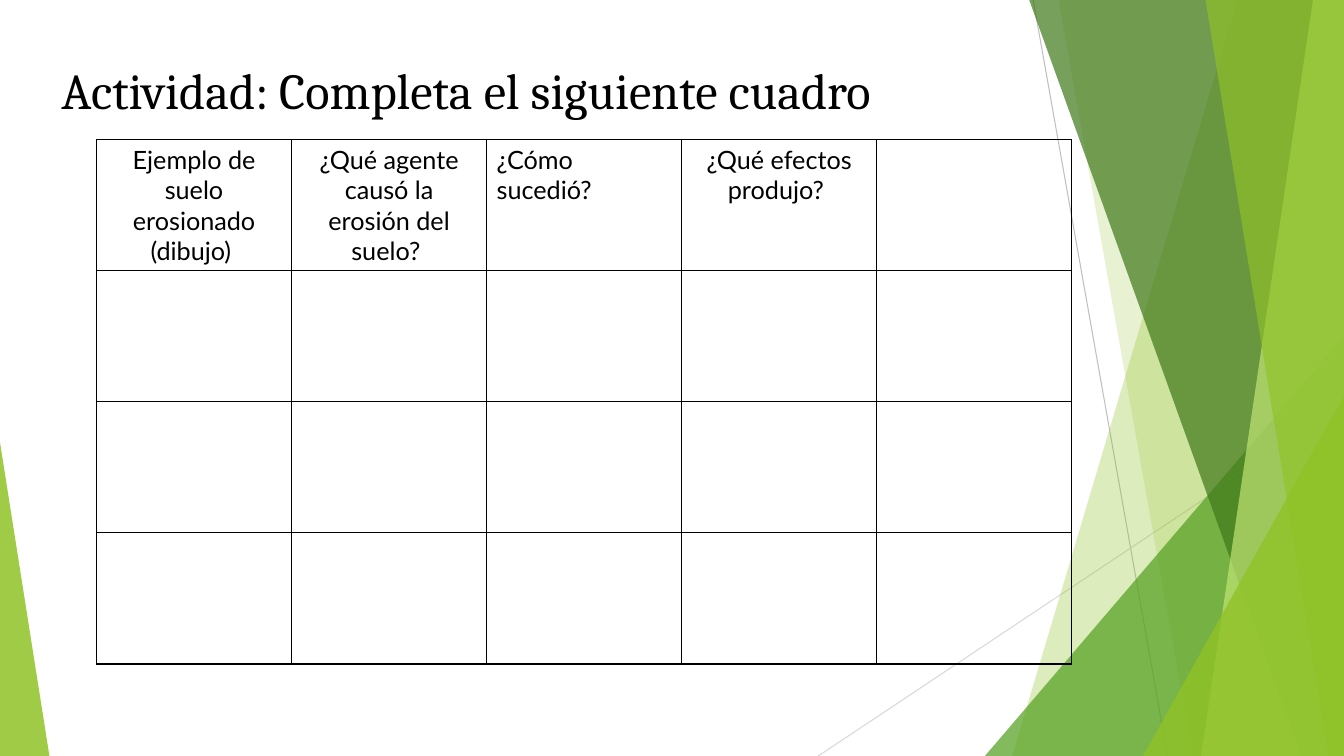
from lxml import etree
from pptx import Presentation
from pptx.dml.color import RGBColor
from pptx.enum.shapes import MSO_CONNECTOR, MSO_SHAPE
from pptx.enum.text import MSO_ANCHOR, PP_ALIGN
from pptx.oxml.ns import qn
from pptx.util import Pt

STRAIGHT = MSO_CONNECTOR.STRAIGHT
TRIANGLE = MSO_SHAPE.ISOSCELES_TRIANGLE
TOP = MSO_ANCHOR.TOP
LEFT, CENTER = PP_ALIGN.LEFT, PP_ALIGN.CENTER

WIDTH, HEIGHT = 960, 540
BLACK, LIME, GREEN = "000000", "90C226", "54A021"
TITLE_FONT = {"name": "Cambria", "size": Pt(36), "bold": False}
CELL_FONT = {"name": "Lato", "size": Pt(18), "bold": False}


def color(value):
    return RGBColor.from_string(value)


class SlideBuilder:
    """Holds the style and the current slide, and adds each kind of element."""

    def __init__(self, presentation):
        self.slide = presentation.slides.add_slide(presentation.slide_layouts[6])
        self.shapes = self.slide.shapes

    def line(self, start, end, line_color):
        connector = self.shapes.add_connector(STRAIGHT, *map(Pt, start + end))
        connector.line.color.rgb = color(line_color)
        connector.line.width = Pt(0.75)
        etree.SubElement(connector._element.spPr, qn("a:effectLst"))

    def paint(self, shape, fill_color, opacity):
        shape.shadow.inherit = False
        shape.fill.solid()
        shape.fill.fore_color.rgb = color(fill_color)
        shape.line.fill.background()
        rgb = shape._element.spPr.find(qn("a:solidFill"))[0]
        etree.SubElement(rgb, qn("a:alpha"), val=str(opacity * 1000))

    def band(self, top_x, bottom_x, fill_color, opacity):
        corners = [(WIDTH, -0.6), (WIDTH, HEIGHT), (bottom_x, HEIGHT)]
        builder = self.shapes.build_freeform(Pt(top_x), Pt(-0.6), scale=1.0)
        builder.add_line_segments([(Pt(x), Pt(y)) for x, y in corners], close=True)
        self.paint(builder.convert_to_shape(), fill_color, opacity)

    def triangle(self, left, top, width, apex, fill_color, opacity):
        box = map(Pt, (left, top, width, HEIGHT - top))
        shape = self.shapes.add_shape(TRIANGLE, *box)
        shape.adjustments[0] = apex
        self.paint(shape, fill_color, opacity)

    def fill_paragraph(self, paragraph, text, font, alignment):
        paragraph.alignment = alignment
        run = paragraph.add_run()
        run.text = text
        for name, value in font.items():
            setattr(run.font, name, value)
        run.font.color.rgb = color(BLACK)

    def title(self, text, box):
        frame = self.shapes.add_textbox(*map(Pt, box)).text_frame
        frame.word_wrap = True
        frame.vertical_anchor = TOP
        self.fill_paragraph(frame.paragraphs[0], text, TITLE_FONT, LEFT)

    def border(self, cell):
        properties = cell._tc.get_or_add_tcPr()
        for side in ("lnL", "lnR", "lnT", "lnB"):
            edge = etree.SubElement(properties, qn(f"a:{side}"), w=str(Pt(1)))
            fill = etree.SubElement(edge, qn("a:solidFill"))
            etree.SubElement(fill, qn("a:srgbClr"), val=BLACK)

    def table(self, headers, rows, left, top, column_width, row_height):
        size = Pt(column_width * len(headers)), Pt(row_height * rows)
        frame = self.shapes.add_table(rows, len(headers), Pt(left), Pt(top), *size)
        table = frame.table
        table.first_row = table.horz_banding = False
        for column in table.columns:
            column.width = Pt(column_width)
        for row in table.rows:
            row.height = Pt(row_height)
        for cell in table.iter_cells():
            self.border(cell)
            cell.fill.background()
        for cell, (text, alignment) in zip(table.rows[0].cells, headers):
            if text:
                paragraph = cell.text_frame.paragraphs[0]
                self.fill_paragraph(paragraph, text, CELL_FONT, alignment)


def main():
    presentation = Presentation()
    presentation.slide_width, presentation.slide_height = Pt(WIDTH), Pt(HEIGHT)
    builder = SlideBuilder(presentation)

    builder.line((738, 0), (834, HEIGHT), "BFBFBF")
    builder.line((WIDTH, 290), (584.5, HEIGHT), "D9D9D9")
    builder.band(884, 723, LIME, 30)
    builder.band(756, 852, LIME, 20)
    builder.triangle(703.5, 240, 256.5, 1, GREEN, 72)
    builder.band(735, 929.5, "3F7819", 70)
    builder.band(938, 858, "C0E474", 70)
    builder.band(861, 949, LIME, 65)
    builder.triangle(816.5, 283, 143.5, 1, LIME, 80)
    builder.triangle(0, 316, 35.3, 0, LIME, 85)

    builder.title("Actividad: Completa el siguiente cuadro", (36.7, 39, 700.6, 72.7))
    headers = [
        ("Ejemplo de suelo erosionado (dibujo) ", CENTER),
        ("¿Qué agente causó la erosión del suelo? ", CENTER),
        ("¿Cómo sucedió?", LEFT),
        ("¿Qué efectos produjo? ", CENTER),
        ("", LEFT),
    ]
    builder.table(headers, 4, 69, 99.8, 139.3, 93.6)
    presentation.save("out.pptx")


if __name__ == "__main__":
    main()
